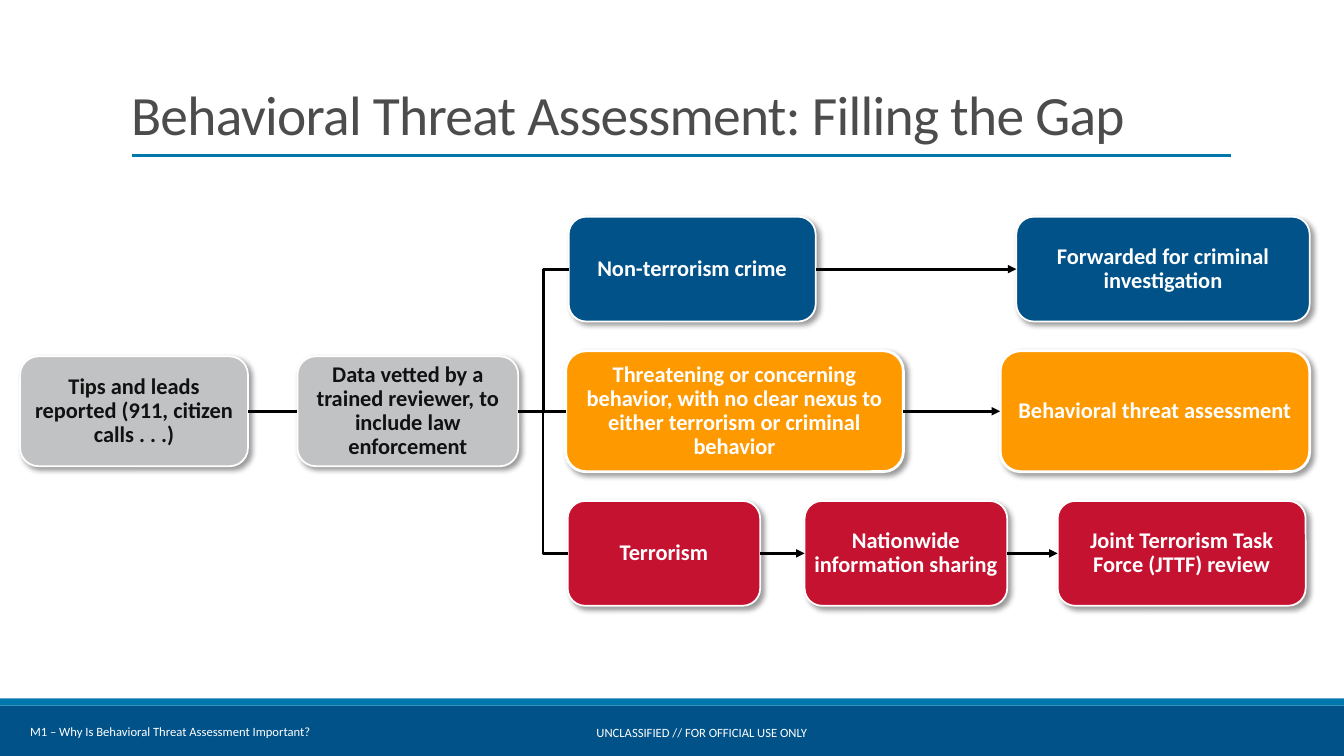
from pptx import Presentation
from pptx import util as u
from pptx.dml.color import RGBColor
from pptx.enum import shapes, text
from pptx.oxml import parse_xml
from pptx.oxml.ns import nsdecls, qn

FONT = "Calibri"
COLORS = {
    "navy": "005288", "blue": "0078AE", "gray": "C0C2C4", "orange": "FF9900",
    "red": "C41230", "white": "FFFFFF", "black": "000000", "ink": "111111",
    "title": "4C4C4C",
}
TOP, RIGHT, LEFT = 0, 3, 1
ROW_CENTER, ROW_STEP = 4.08, 1.41


def color(name):
    return RGBColor.from_string(COLORS[name])


def inches(*lengths):
    return [u.Inches(length) for length in lengths]


def write(shape, words, size, ink, bold=False, align=text.PP_ALIGN.LEFT,
          anchor=text.MSO_ANCHOR.MIDDLE, line_spacing=1.0, margin=None, wrap=True):
    frame = shape.text_frame
    frame.word_wrap = wrap
    frame.vertical_anchor = anchor
    if margin is not None:
        frame.margin_left = frame.margin_right = u.Inches(margin)
        frame.margin_top = frame.margin_bottom = u.Inches(margin)
    paragraph = frame.paragraphs[0]
    paragraph.alignment = align
    paragraph.line_spacing = line_spacing
    run = paragraph.add_run()
    run.text = words
    run.font.name, run.font.size, run.font.bold = FONT, u.Pt(size), bold
    run.font.color.rgb = color(ink)
    return run


def add_block(slide, kind, box, fill):
    shape = slide.shapes.add_shape(kind, *inches(*box))
    shape.shadow.inherit = False
    shape.fill.solid()
    shape.fill.fore_color.rgb = color(fill)
    shape.line.fill.background()
    return shape


def add_line(slide, ink, width, begin=(0, 0), end=(0, 0),
             kind=shapes.MSO_CONNECTOR.STRAIGHT):
    line = slide.shapes.add_connector(kind, *inches(*begin, *end))
    line.line.color.rgb = color(ink)
    line.line.width = u.Pt(width)
    line._element.spPr.append(parse_xml(f"<a:effectLst {nsdecls('a')}/>"))
    return line


def add_step(slide, words, left, width, center, height, fill, ink="white", outline=1.25):
    """Add a rounded, shadowed box centred vertically on its row."""
    box = (left, center - height / 2, width, height)
    step = add_block(slide, shapes.MSO_SHAPE.ROUNDED_RECTANGLE, box, fill)
    step.line.color.rgb = color("white")
    step.line.width = u.Pt(outline)
    step._element.spPr.find(qn("a:effectLst")).append(parse_xml(
        f'<a:outerShdw {nsdecls("a")} blurRad="50800" dist="38100" dir="2700000" '
        f'algn="tl" rotWithShape="0"><a:srgbClr val="{COLORS["black"]}">'
        '<a:alpha val="40000"/></a:srgbClr></a:outerShdw>'))
    write(step, words, 16, ink, bold=True, align=text.PP_ALIGN.CENTER,
          line_spacing=0.9, margin=0.01)
    return step


def join(slide, source, target, arrow=False, kind=shapes.MSO_CONNECTOR.STRAIGHT):
    """Connect the right side of one step to the left side of another."""
    line = add_line(slide, "black", 2, kind=kind)
    line.begin_connect(source, RIGHT)
    line.end_connect(target, LEFT)
    if arrow:
        line.line._get_or_add_ln().append(
            parse_xml(f'<a:tailEnd {nsdecls("a")} type="triangle"/>'))


def add_title(slide, box, words):
    left, top, width, height = box
    title = slide.shapes.title
    title.left, title.top, title.width, title.height = inches(*box)
    run = write(title, words, 39.6, "title", anchor=text.MSO_ANCHOR.BOTTOM,
                line_spacing=0.85)
    run.font._element.set("spc", "-50")
    rule = top + height + 0.03
    add_line(slide, "blue", 2.25, (left + 0.11, rule), (left + width + 0.01, rule))


def add_footer(slide, box, section, marking):
    left, top, width, height = box
    rectangle = shapes.MSO_SHAPE.RECTANGLE
    add_block(slide, rectangle, box, "navy")
    add_block(slide, rectangle, (left, top - 0.07, width, 0.07), "blue")
    section_box = slide.shapes.add_textbox(*inches(left + 0.2, top + 0.06, 5.27, 0.4))
    write(section_box, section, 9, "white")
    marking_box = slide.shapes.add_textbox(*inches(left + 5.79, top + 0.14, 2.34, 0.25))
    write(marking_box, marking, 9, "white", align=text.PP_ALIGN.CENTER, wrap=False)


def add_flow(slide, left, center, step):
    """Add the intake steps and the three branches, a row step apart."""
    intake = [
        add_step(slide, words, left + offset, width, center, 1.09, "gray", "ink")
        for words, offset, width in (
            ("Tips and leads reported (911, citizen calls . . .)", 0, 2.26),
            ("Data vetted by a trained reviewer, to include law enforcement", 2.75, 2.19),
        )
    ]
    join(slide, *intake)

    branches = (
        (-1, 1.04, "navy", 1.25, (
            ("Non-terrorism crime", 5.44, 2.45),
            ("Forwarded for criminal investigation", 9.88, 2.91))),
        (0, 1.2, "orange", 2, (
            ("Threatening or concerning behavior, with no clear nexus to either "
             "terrorism or criminal behavior", 5.41, 3.35),
            ("Behavioral threat assessment", 9.72, 3.07))),
        (1, 1.04, "red", 1.25, (
            ("Terrorism", 5.43, 1.91),
            ("Nationwide information sharing", 7.78, 2.01),
            ("Joint Terrorism Task Force (JTTF) review", 10.29, 2.46))),
    )
    for row, height, fill, outline, entries in branches:
        steps = [
            add_step(slide, words, left + offset, width, center + row * step,
                     height, fill, outline=outline)
            for words, offset, width in entries
        ]
        kind = shapes.MSO_CONNECTOR.ELBOW if row else shapes.MSO_CONNECTOR.STRAIGHT
        join(slide, intake[-1], steps[0], kind=kind)
        for source, target in zip(steps, steps[1:]):
            join(slide, source, target, arrow=True)


def main():
    presentation = Presentation()
    presentation.slide_width, presentation.slide_height = inches(13.33, 7.5)
    slide = presentation.slides.add_slide(presentation.slide_layouts[5])
    add_footer(slide, (0, 7, 13.33, 0.5),
               "M1 – Why Is Behavioral Threat Assessment Important?",
               "UNCLASSIFIED // FOR OFFICIAL USE ONLY")
    add_title(slide, (1.2, 0.31, 11, 1.2), "Behavioral Threat Assessment: Filling the Gap")
    add_flow(slide, 0.2, ROW_CENTER, ROW_STEP)
    presentation.save("out.pptx")


if __name__ == "__main__":
    main()
